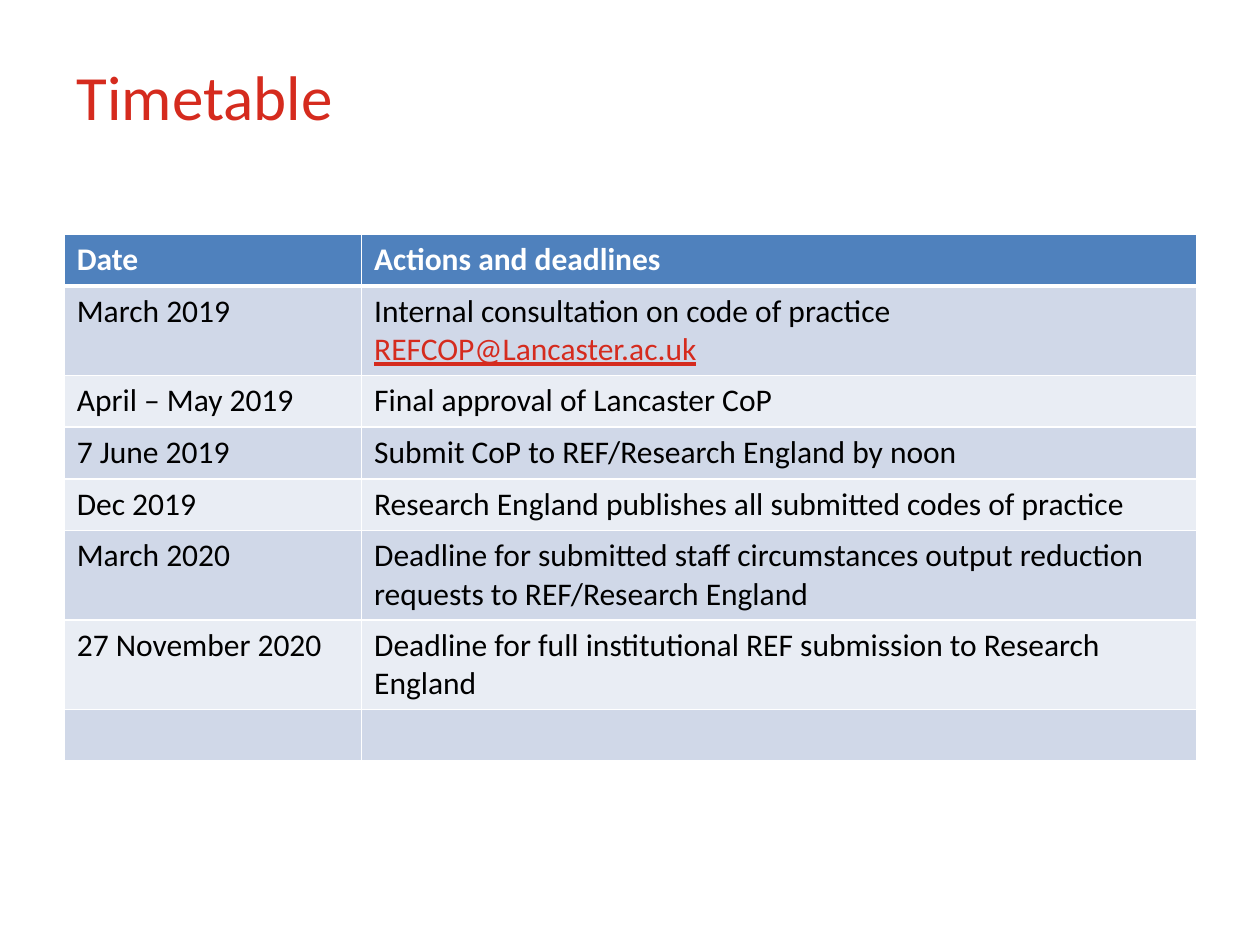
from dataclasses import dataclass

from lxml import etree
from pptx import Presentation
from pptx.dml.color import RGBColor
from pptx.enum.text import MSO_ANCHOR, PP_ALIGN
from pptx.oxml.ns import qn
from pptx.util import Pt

LEFT = PP_ALIGN.LEFT
TOP = MSO_ANCHOR.TOP
EMU_PER_PX = 9144


@dataclass(frozen=True)
class Theme:
    font: str = "Calibri"
    title_size: int = 36
    title_leading: int = 35
    body_size: int = 18
    accent: str = "D52B1E"
    text: str = "000000"
    white: str = "FFFFFF"
    header: str = "4F81BD"
    bands: tuple = ("D0D8E8", "E9EDF4")
    rule: int = 1
    header_rule: int = 3


def px(n):
    return n * EMU_PER_PX


class Deck:
    def __init__(self, theme, width, height):
        self.theme = theme
        self.prs = Presentation()
        self.prs.slide_width, self.prs.slide_height = px(width), px(height)
        self.s = None

    def slide(self):
        self.s = self.prs.slides.add_slide(self.prs.slide_layouts[5])

    def run(self, p, text, size, color, bold=False, underline=False):
        r = p.add_run()
        r.text = text
        r.font.name = self.theme.font
        r.font.size = Pt(size)
        r.font.color.rgb = RGBColor.from_string(color)
        r.font.bold = bold
        r.font.underline = underline

    def title(self, text, x, y, w, h):
        sp = self.s.shapes.title
        sp.left, sp.top, sp.width, sp.height = px(x), px(y), px(w), px(h)
        tf = sp.text_frame
        tf.word_wrap = True
        tf.vertical_anchor = TOP
        p = tf.paragraphs[0]
        p.alignment = LEFT
        p.line_spacing = Pt(self.theme.title_leading)
        self.run(p, text, self.theme.title_size, self.theme.accent)

    def borders(self, cell, top, bottom):
        tc_pr = cell._tc.get_or_add_tcPr()
        widths = {"lnL": self.theme.rule, "lnR": self.theme.rule,
                  "lnT": top, "lnB": bottom}
        for tag, width in widths.items():
            ln = etree.SubElement(tc_pr, qn(f"a:{tag}"), w=str(Pt(width)))
            fill = etree.SubElement(ln, qn("a:solidFill"))
            etree.SubElement(fill, qn("a:srgbClr"), val=self.theme.white)

    def cell(self, cell, lines, row):
        t = self.theme
        is_header = row == 0
        self.borders(cell, t.header_rule if row == 1 else t.rule,
                     t.header_rule if is_header else t.rule)
        cell.fill.solid()
        fill = t.header if is_header else t.bands[(row - 1) % 2]
        cell.fill.fore_color.rgb = RGBColor.from_string(fill)
        tf = cell.text_frame
        for i, text in enumerate(lines):
            p = tf.add_paragraph() if i else tf.paragraphs[0]
            is_email = "@" in text
            color = t.white if is_header else t.accent if is_email else t.text
            self.run(p, text, t.body_size, color, is_header, is_email)

    def table(self, rows, x, y, col_widths, row_height):
        frame = self.s.shapes.add_table(
            len(rows), len(col_widths), px(x), px(y),
            px(sum(col_widths)), px(row_height * len(rows)))
        table = frame.table
        for column, width in zip(table.columns, col_widths):
            column.width = px(width)
        for i, row in enumerate(rows):
            for j, lines in enumerate(row):
                self.cell(table.cell(i, j), lines, i)


TIMETABLE = [
    (["Date"], ["Actions and deadlines"]),
    (["March 2019"], ["Internal consultation on code of practice",
                      "REFCOP@Lancaster.ac.uk"]),
    (["April – May 2019"], ["Final approval of Lancaster CoP"]),
    (["7 June 2019"], ["Submit CoP to REF/Research England by noon"]),
    (["Dec 2019"],
     ["Research England publishes all submitted codes of practice"]),
    (["March 2020"], ["Deadline for submitted staff circumstances output "
                      "reduction requests to REF/Research England"]),
    (["27 November 2020"], ["Deadline for full institutional REF submission "
                            "to Research England"]),
    ([], []),
]


def main():
    deck = Deck(Theme(), 1000, 750)
    deck.slide()
    deck.table(TIMETABLE, 51, 186, (236, 663), 41)
    deck.title("Timetable", 51, 52, 732, 126)
    deck.prs.save("out.pptx")


if __name__ == "__main__":
    main()
